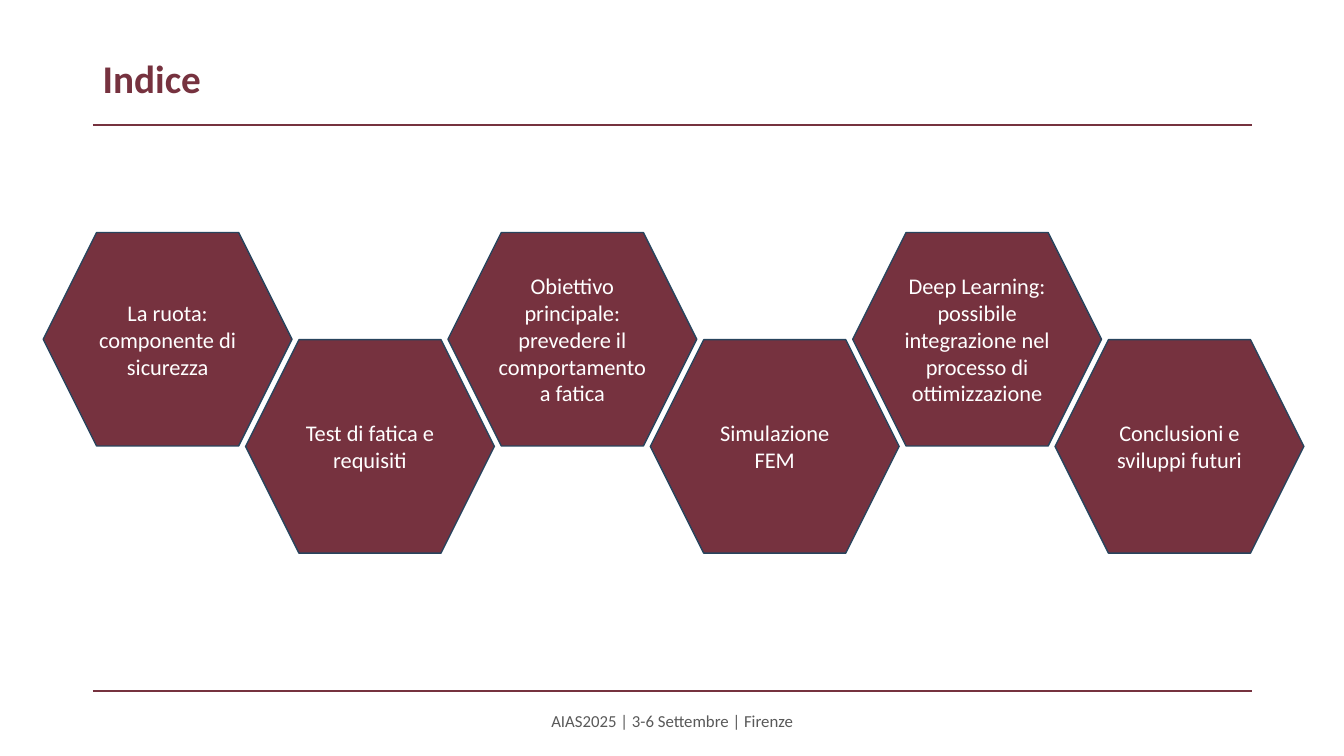
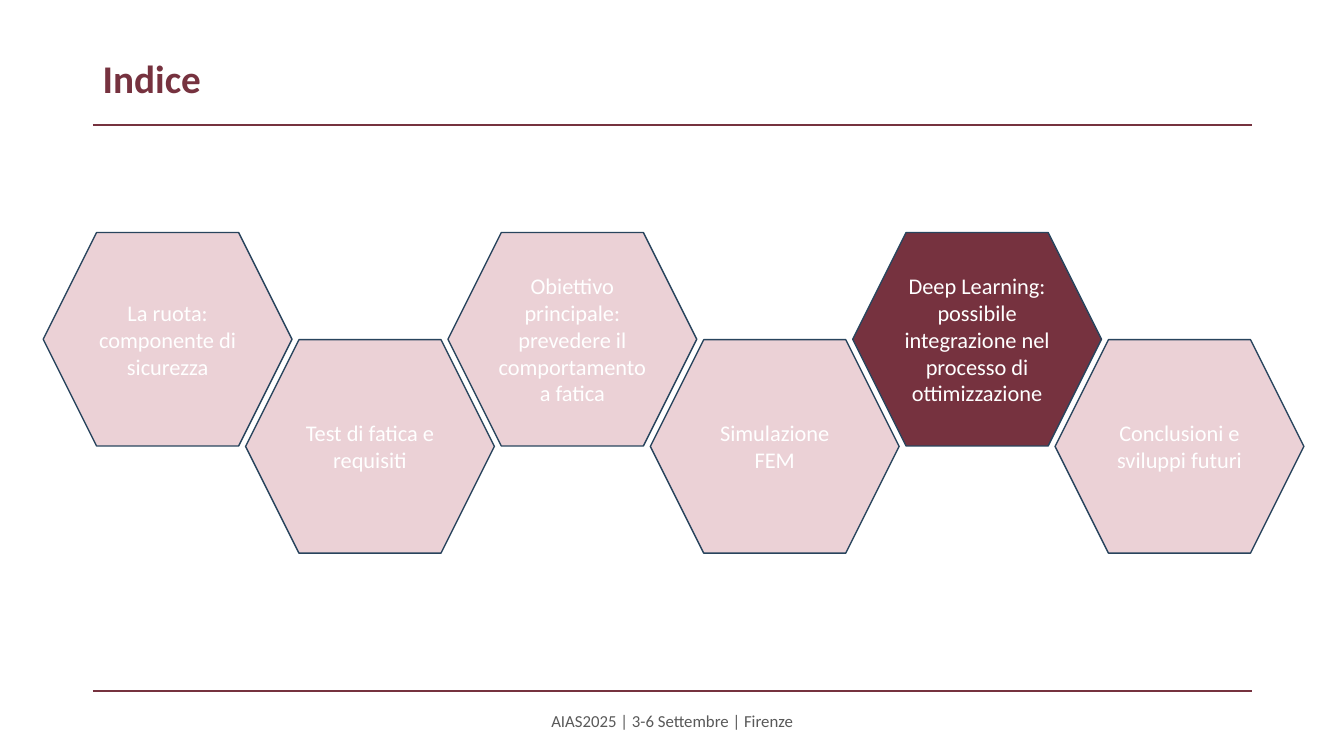
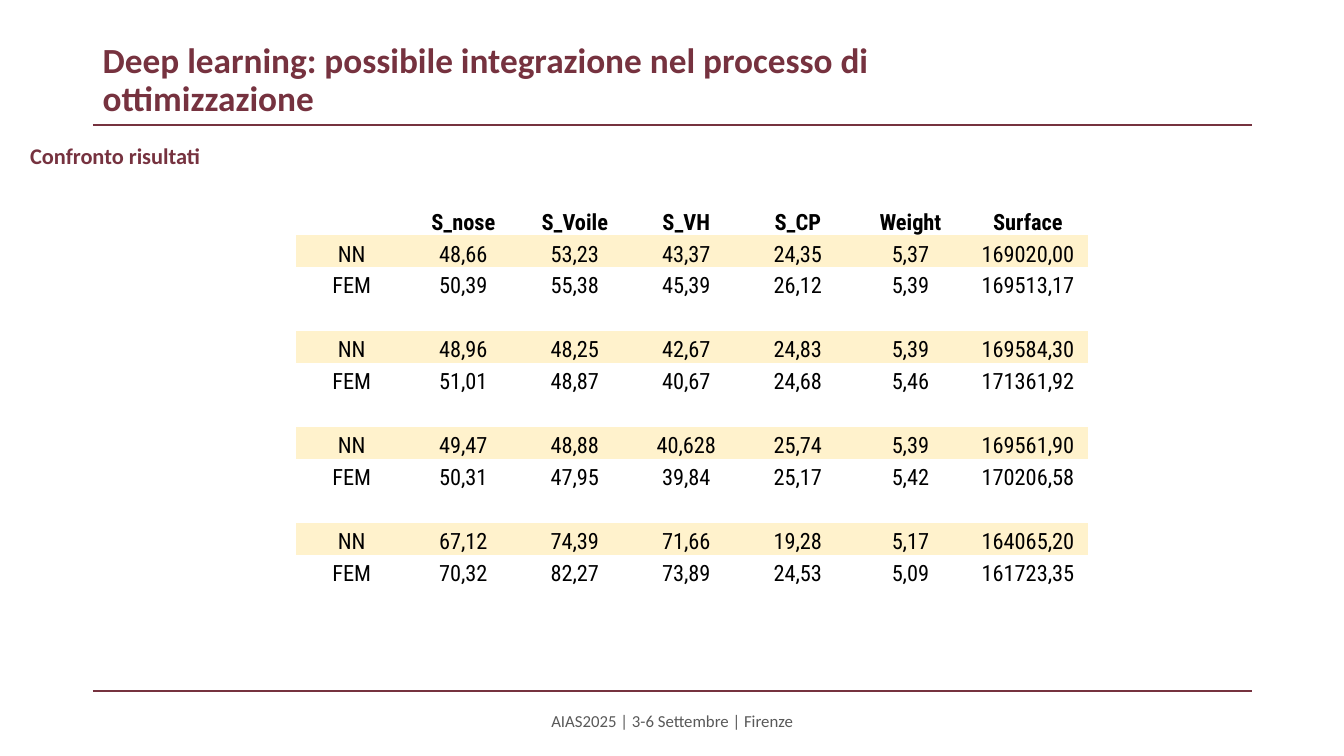
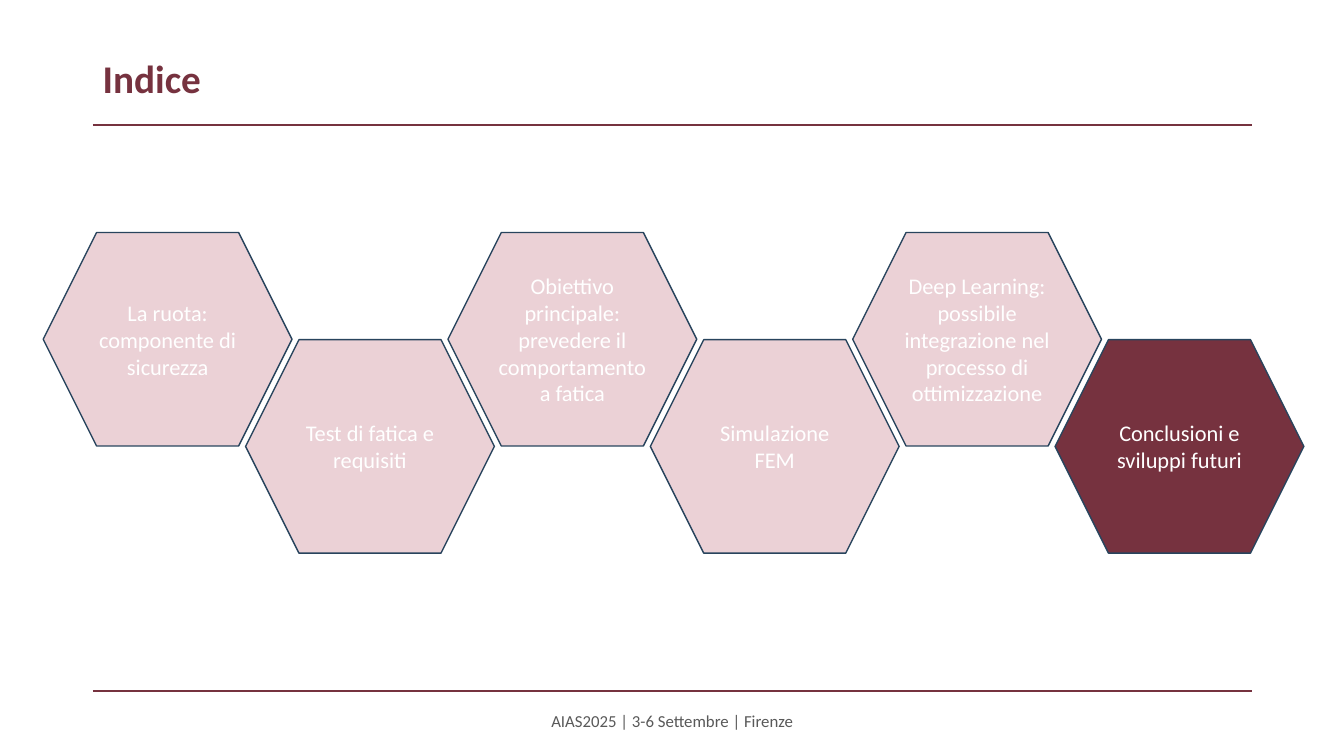
from dataclasses import dataclass

from lxml import etree
from pptx import Presentation
from pptx.dml.color import RGBColor
from pptx.enum.shapes import MSO_CONNECTOR, MSO_SHAPE
from pptx.enum.text import MSO_ANCHOR, PP_ALIGN
from pptx.oxml.ns import qn
from pptx.util import Cm, Pt

HEXAGON, STRAIGHT = MSO_SHAPE.HEXAGON, MSO_CONNECTOR.STRAIGHT
TOP, MIDDLE, BOTTOM = MSO_ANCHOR.TOP, MSO_ANCHOR.MIDDLE, MSO_ANCHOR.BOTTOM
LEFT, CENTER, JUSTIFY = PP_ALIGN.LEFT, PP_ALIGN.CENTER, PP_ALIGN.JUSTIFY
PLAIN_TABLE = "{2D5ABB26-0587-4C30-8999-92F81FD0307C}"


@dataclass(frozen=True)
class Theme:
    accent: str = "76323F"
    muted: str = "EBD1D6"
    outline: str = "28445D"
    band: str = "FFF2CC"
    white: str = "FFFFFF"
    black: str = "000000"
    grey: str = "595959"
    font: str = "Calibri"
    table_font: str = "Roboto Condensed"
    title: float = 28
    long_title: float = 25.2
    body: float = 16
    footer: float = 12


def rgb(color):
    return RGBColor.from_string(color)


class Deck:
    def __init__(self, theme):
        self.t = theme
        self.prs = Presentation()
        self.prs.slide_width, self.prs.slide_height = Cm(33.87), Cm(19.05)
        self.s = None

    def add_text(self, tf, text, size, color, align=LEFT, bold=False, font=None):
        p = tf.paragraphs[0]
        p.alignment = align
        r = p.add_run()
        r.text = text
        r.font.name = font or self.t.font
        r.font.size = Pt(size)
        r.font.bold = bold
        r.font.color.rgb = rgb(color)
        return p

    def textbox(self, x, y, w, h, text, size, color, anchor=MIDDLE, **style):
        tf = self.s.shapes.add_textbox(Cm(x), Cm(y), Cm(w), Cm(h)).text_frame
        tf.word_wrap = True
        tf.vertical_anchor = anchor
        return self.add_text(tf, text, size, color, **style)

    def rule(self, y):
        line = self.s.shapes.add_connector(STRAIGHT, Cm(2.34), Cm(y), Cm(31.55), Cm(y))
        line.line.color.rgb = rgb(self.t.accent)
        line.line.width = Pt(1.5)
        etree.SubElement(line._element.spPr, qn("a:effectLst"))

    def slide(self, title, size=None):
        """Start a slide with its rules, title and footer."""
        t = self.t
        self.s = self.prs.slides.add_slide(self.prs.slide_layouts[6])
        self.rule(3.15)
        self.rule(17.42)
        p = self.textbox(2.34, 1.02, 24.74, 2.03, title, size or t.title, t.accent, bold=True)
        p.line_spacing = 0.9
        self.textbox(11.23, 17.65, 11.43, 1.02, "AIAS2025 | 3-6 Settembre | Firenze",
                     t.footer, t.grey, align=CENTER)

    def hexagon(self, x, y, text, fill):
        sp = self.s.shapes.add_shape(HEXAGON, Cm(x), Cm(y), Cm(6.27), Cm(5.38))
        sp.shadow.inherit = False
        sp.fill.solid()
        sp.fill.fore_color.rgb = rgb(fill)
        sp.line.color.rgb = rgb(self.t.outline)
        sp.line.width = Pt(1)
        tf = sp.text_frame
        tf.word_wrap = True
        tf.vertical_anchor = MIDDLE
        self.add_text(tf, text, self.t.body, self.t.white, align=CENTER)

    def index(self, topics, current=None):
        """Zigzag of topics; with a current one, the others are muted."""
        self.slide("Indice")
        for i, topic in enumerate(topics):
            active = current is None or i == current
            self.hexagon(1.09 + 5.1 * i, 5.86 + 2.7 * (i % 2), topic,
                         self.t.accent if active else self.t.muted)

    def table(self, x, y, h, widths, rows):
        t = self.t
        table = self.s.shapes.add_table(len(rows), len(widths), Cm(x), Cm(y),
                                        Cm(sum(widths)), Cm(h)).table
        table.first_row = table.horz_banding = False
        table._tbl.tblPr.find(qn("a:tableStyleId")).text = PLAIN_TABLE
        for column, width in zip(table.columns, widths):
            column.width = Cm(width)
        for i, row in enumerate(rows):
            for j, value in enumerate(row):
                cell = table.cell(i, j)
                cell.margin_left = cell.margin_right = cell.margin_top = Cm(0.03)
                cell.margin_bottom = 0
                cell.vertical_anchor = BOTTOM
                if row[0] == "NN":
                    cell.fill.solid()
                    cell.fill.fore_color.rgb = rgb(t.band)
                else:
                    cell.fill.background()
                if value:
                    self.add_text(cell.text_frame, value, t.body, t.black, align=CENTER,
                                  bold=i == 0, font=t.table_font)
                else:
                    cell.text_frame.paragraphs[0].font.size = Pt(t.body)


TOPICS = [
    "La ruota: componente di sicurezza",
    "Test di fatica e requisiti",
    "Obiettivo principale: prevedere il comportamento a fatica",
    "Simulazione FEM",
    "Deep Learning: possibile integrazione nel processo di ottimizzazione",
    "Conclusioni e sviluppi futuri",
]
HEADER = ["", "S_nose", "S_Voile", "S_VH", "S_CP", "Weight", "Surface"]
# Each pair: network prediction, then simulation
RESULTS = [
    ("48,66 53,23 43,37 24,35 5,37 169020,00", "50,39 55,38 45,39 26,12 5,39 169513,17"),
    ("48,96 48,25 42,67 24,83 5,39 169584,30", "51,01 48,87 40,67 24,68 5,46 171361,92"),
    ("49,47 48,88 40,628 25,74 5,39 169561,90", "50,31 47,95 39,84 25,17 5,42 170206,58"),
    ("67,12 74,39 71,66 19,28 5,17 164065,20", "70,32 82,27 73,89 24,53 5,09 161723,35"),
]


def main():
    theme = Theme()
    deck = Deck(theme)

    # Index, whole and at the fifth topic
    deck.index(TOPICS)
    deck.index(TOPICS, current=4)

    # Comparison of results
    deck.slide("Deep learning: possibile integrazione nel processo di ottimizzazione",
               theme.long_title)
    deck.textbox(0.51, 3.45, 10.52, 0.94, "Confronto risultati", theme.body, theme.accent,
                 anchor=TOP, align=JUSTIFY, bold=True)
    rows = [HEADER]
    for nn, fem in RESULTS:
        rows += [["NN", *nn.split()], ["FEM", *fem.split()], [""] * len(HEADER)]
    deck.table(7.46, 5.13, 10.46, [2.81] * 5 + [2.87, 3.05], rows)

    # Index at the last topic
    deck.index(TOPICS, current=5)

    deck.prs.save("out.pptx")


if __name__ == "__main__":
    main()
